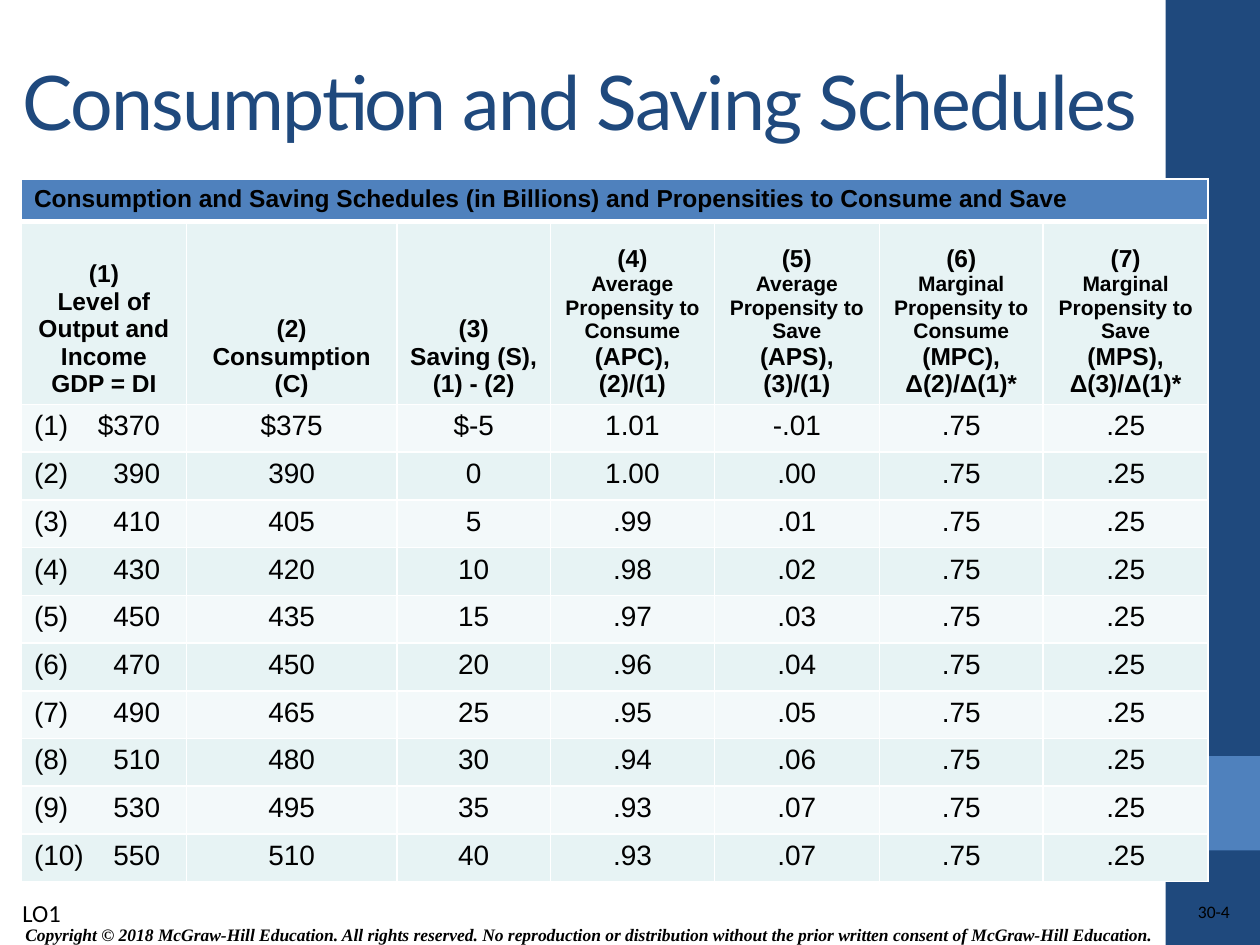
"""Build the consumption and saving schedules slide."""
from lxml import etree
from pptx import Presentation
from pptx import util as u
from pptx.dml.color import RGBColor
from pptx.enum import shapes, text
from pptx.oxml.ns import qn

COLORS = {"navy": "1F497D", "blue": "4F81BD", "mint": "E7F3F4",
          "pale": "F3F9FA", "white": "FFFFFF", "black": "000000"}
TITLE = "Consumption and Saving Schedules"
CAPTION = "Consumption and Saving Schedules (in Billions) and Propensities to Consume and Save"
COPYRIGHT = ("Copyright © 2018 McGraw-Hill Education. All rights reserved. No reproduction or "
             "distribution without the prior written consent of McGraw-Hill Education.")
HEADERS = [
    ["(1)", "Level of Output and Income", "GDP = DI"],
    ["(2)", "Consumption", "(C)"],
    ["(3)", "Saving (S),", "(1) - (2)"],
    ["(4)", "Average Propensity to Consume", "(APC),", "(2)/(1)"],
    ["(5)", "Average Propensity to Save", "(APS),", "(3)/(1)"],
    ["(6)", "Marginal Propensity to Consume", "(MPC),", "Δ(2)/Δ(1)*"],
    ["(7)", "Marginal Propensity to Save", "(MPS),", "Δ(3)/Δ(1)*"],
]
SCHEDULE = [
    ("$370", "$375", "$-5", "1.01", "-.01"),
    ("390", "390", "0", "1.00", ".00"),
    ("410", "405", "5", ".99", ".01"),
    ("430", "420", "10", ".98", ".02"),
    ("450", "435", "15", ".97", ".03"),
    ("470", "450", "20", ".96", ".04"),
    ("490", "465", "25", ".95", ".05"),
    ("510", "480", "30", ".94", ".06"),
    ("530", "495", "35", ".93", ".07"),
    ("550", "510", "40", ".93", ".07"),
]
MARGINAL = (".75", ".25")
COLUMN_WIDTHS = [1.31, 1.67, 1.22, 1.3, 1.31, 1.3, 1.31]
TABLE_LEFT, TABLE_TOP, TABLE_HEIGHT = 0.17, 1.42, 5.58
CAPTION_HEIGHT, HEADER_HEIGHT = 0.34, 1.45
INCOME_TAB = 1.0
BAR_LEFT, BAR_WIDTH = 9.25, 0.75
ALIGN = text.PP_ALIGN
ANCHOR = text.MSO_ANCHOR


def color(name):
    return RGBColor.from_string(COLORS[name])


def inches(*lengths):
    return [u.Inches(length) for length in lengths]


def style(paragraph, size, name, tint="black", bold=False, italic=False, align=ALIGN.LEFT):
    paragraph.alignment = align
    font = paragraph.font
    font.size, font.name, font.bold, font.italic = u.Pt(size), name, bold, italic
    font.color.rgb = color(tint)


def add_block(slide, box, fill):
    block = slide.shapes.add_shape(shapes.MSO_SHAPE.RECTANGLE, *inches(*box))
    block.shadow.inherit = False
    block.fill.solid()
    block.fill.fore_color.rgb = color(fill)
    block.line.fill.background()


def add_label(slide, box, words, size, name, wrap=True, **look):
    frame = slide.shapes.add_textbox(*inches(*box)).text_frame
    frame.word_wrap = wrap
    frame.text = words
    style(frame.paragraphs[0], size, name, **look)
    return frame


def add_title(slide):
    title = slide.shapes.title
    title.left, title.top, title.width, title.height = inches(0.08, 0.17, 9.17, 1.25)
    frame = title.text_frame
    frame.text = TITLE
    frame.vertical_anchor = ANCHOR.MIDDLE
    frame.auto_size = text.MSO_AUTO_SIZE.NONE
    style(frame.paragraphs[0], 43, "Lato", "navy")
    frame.paragraphs[0].runs[0].font._element.set("spc", "-100")


def format_cell(cell, fill, top=1, bottom=1):
    properties = cell._tc.get_or_add_tcPr()
    for side, width in (("L", 1), ("R", 1), ("T", top), ("B", bottom)):
        line = etree.SubElement(properties, qn(f"a:ln{side}"), w=str(u.Pt(width)))
        solid = etree.SubElement(line, qn("a:solidFill"))
        etree.SubElement(solid, qn("a:srgbClr"), val=COLORS["white"])
    cell.fill.solid()
    cell.fill.fore_color.rgb = color(fill)


def add_income_tab(paragraph):
    tabs = etree.SubElement(paragraph._p.get_or_add_pPr(), qn("a:tabLst"))
    etree.SubElement(tabs, qn("a:tab"), pos=str(u.Inches(INCOME_TAB)), algn="r")


def fill_headers(table):
    for column, lines in enumerate(HEADERS):
        cell = table.cell(1, column)
        cell.text = "\n".join(lines)
        cell.vertical_anchor = ANCHOR.BOTTOM
        for index, paragraph in enumerate(cell.text_frame.paragraphs):
            size = 12 if len(lines) == 4 and index == 1 else 14
            style(paragraph, size, "Arial", bold=True, align=ALIGN.CENTER)
        format_cell(cell, "mint", top=3)


def fill_schedule(table):
    for number, (income, *values) in enumerate(SCHEDULE, 1):
        for column, value in enumerate([f"({number})\t{income}", *values, *MARGINAL]):
            cell = table.cell(number + 1, column)
            cell.text = value
            paragraph = cell.text_frame.paragraphs[0]
            if column == 0:
                add_income_tab(paragraph)
            style(paragraph, 16, "Arial", align=ALIGN.CENTER if column else ALIGN.LEFT)
            format_cell(cell, "pale" if number % 2 else "mint")


def add_schedule_table(slide):
    row_height = (TABLE_HEIGHT - CAPTION_HEIGHT - HEADER_HEIGHT) / len(SCHEDULE)
    heights = [CAPTION_HEIGHT, HEADER_HEIGHT] + [row_height] * len(SCHEDULE)
    box = inches(TABLE_LEFT, TABLE_TOP, sum(COLUMN_WIDTHS), TABLE_HEIGHT)
    table = slide.shapes.add_table(len(heights), len(COLUMN_WIDTHS), *box).table
    for column, width in zip(table.columns, COLUMN_WIDTHS):
        column.width = u.Inches(width)
    for row, height in zip(table.rows, heights):
        row.height = u.Inches(height)
    for column in range(len(COLUMN_WIDTHS)):
        format_cell(table.cell(0, column), "blue", bottom=3)
    caption = table.cell(0, 0)
    caption.merge(table.cell(0, len(COLUMN_WIDTHS) - 1))
    caption.text = CAPTION
    style(caption.text_frame.paragraphs[0], 14, "Arial", bold=True)
    fill_headers(table)
    fill_schedule(table)


def main():
    presentation = Presentation()
    presentation.slide_width, presentation.slide_height = inches(10, 7.5)
    slide = presentation.slides.add_slide(presentation.slide_layouts[5])
    add_block(slide, (BAR_LEFT, 0, BAR_WIDTH, 7.5), "navy")
    add_block(slide, (BAR_LEFT, 6, BAR_WIDTH, BAR_WIDTH), "blue")
    notice = add_label(slide, (0.06, 7.28, 9.22, 0.28), COPYRIGHT, 10, "Times New Roman",
                       bold=True, italic=True, align=ALIGN.CENTER)
    notice.vertical_anchor = ANCHOR.MIDDLE
    page = add_label(slide, (7.81, 7.15, 1.95, 0.2), "30-4", 10, "Calibri", align=ALIGN.RIGHT)
    page.margin_left = page.margin_right = page.margin_top = page.margin_bottom = 0
    add_title(slide)
    add_schedule_table(slide)
    add_label(slide, (0.08, 7.08, 0.53, 0.34), "LO1", 14, "Calibri", wrap=False)
    presentation.save("out.pptx")


if __name__ == "__main__":
    main()
